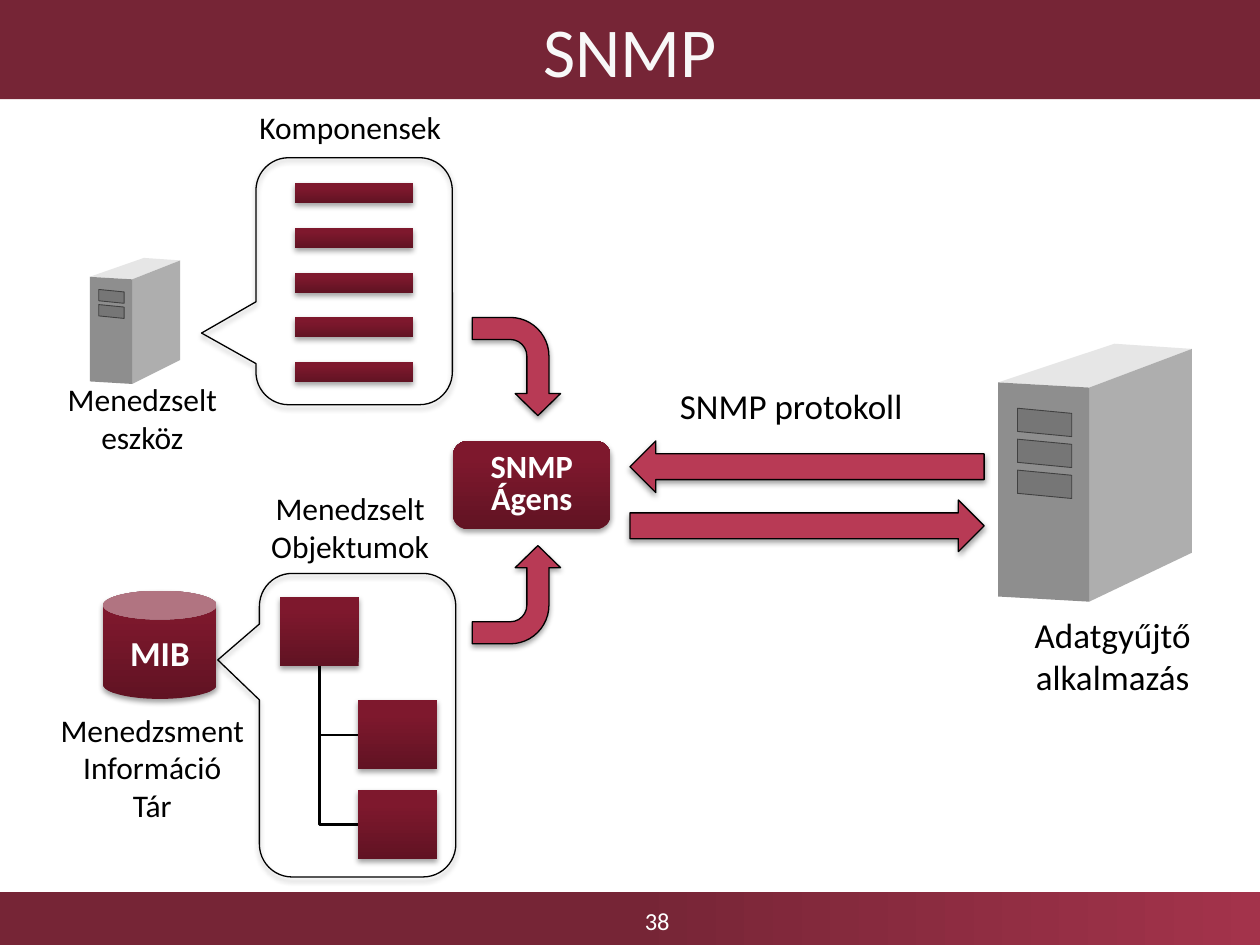
"""Build the SNMP architecture slide."""
from pptx import Presentation
from pptx.dml.color import RGBColor
from pptx.enum import shapes, text
from pptx.oxml import parse_xml
from pptx.oxml.ns import nsdecls, qn
from pptx.util import Cm, Pt

COLORS = {
    "band": "762536", "band_end": "A3334B", "title": "F8F8F8",
    "dark": "611323", "wine": "7E182D", "arrow": "B83A55",
    "black": "000000", "white": "FFFFFF", "front": "8E8E8E",
    "side": "AEAEAE", "top": "E6E6E6", "slot": "767676", "edge": "404040",
}
KIND = shapes.MSO_SHAPE


def rgb(name):
    """Return a named colour."""
    return RGBColor.from_string(COLORS[name])


def paint(shape, fill=None, line=None, width=0.75):
    """Set a solid fill and outline, and drop the theme shadow."""
    if fill:
        shape.fill.solid()
        shape.fill.fore_color.rgb = rgb(fill)
    else:
        shape.fill.background()
    if line:
        shape.line.color.rgb = rgb(line)
        shape.line.width = Pt(width)
    else:
        shape.line.fill.background()
    shape.shadow.inherit = False


def shade(shape, stops, angle):
    """Fill a shape with a two-stop linear gradient."""
    shape.fill.gradient()
    shape.fill.gradient_angle = angle
    for stop, (position, name) in zip(shape.fill.gradient_stops, stops):
        stop.position = position
        stop.color.rgb = rgb(name)


def cast_shadow(shape):
    """Give a shape a soft shadow below it."""
    effects = shape._element.spPr.find(qn("a:effectLst"))
    effects.append(parse_xml(
        f'<a:outerShdw {nsdecls("a")} blurRad="40000" dist="22000" dir="5400000" '
        'rotWithShape="0"><a:srgbClr val="000000"><a:alpha val="36000"/>'
        '</a:srgbClr></a:outerShdw>'))


def write(shape, lines, size, color="black", bold=False, spacing=None):
    """Write centred lines, one paragraph each."""
    frame = shape.text_frame
    for index, line in enumerate(lines):
        para = frame.add_paragraph() if index else frame.paragraphs[0]
        para.alignment = text.PP_ALIGN.CENTER
        if spacing:
            para.line_spacing = spacing
        span = para.add_run()
        span.text = line
        span.font.name = "Calibri"
        span.font.size = Pt(size)
        span.font.bold = bold
        span.font.color.rgb = rgb(color)


def add_shape(page, kind, left, top, width, height):
    """Add a preset shape placed in centimetres."""
    return page.shapes.add_shape(kind, Cm(left), Cm(top), Cm(width), Cm(height))


def add_block(page, kind, left, top, width, height):
    """Add a wine-coloured block with a shadow."""
    block = add_shape(page, kind, left, top, width, height)
    paint(block)
    shade(block, [(0, "dark"), (0.8, "wine")], 90)
    cast_shadow(block)
    block.text_frame.vertical_anchor = text.MSO_ANCHOR.MIDDLE
    return block


def add_callout(page, left, top, width, height, tail):
    """Add an outlined callout with its tail at relative offsets."""
    callout = add_shape(page, KIND.ROUNDED_RECTANGULAR_CALLOUT, left, top, width, height)
    for index, value in enumerate((*tail, 0.167)):
        callout.adjustments[index] = value
    paint(callout, line="black")
    cast_shadow(callout)


def add_arrow(page, kind, left, top, width, height):
    """Add a filled block arrow."""
    arrow = add_shape(page, kind, left, top, width, height)
    paint(arrow, "arrow", "black")
    cast_shadow(arrow)
    return arrow


def add_bent_arrow(page, top, rotation, flipped=False):
    """Add a turned arrow pointing at the agent."""
    arrow = add_arrow(page, KIND.BENT_ARROW, 9.42, top, 1.98, 1.78)
    for index, value in enumerate((0.25, 0.257, 0.25, 0.438)):
        arrow.adjustments[index] = value
    arrow.rotation = rotation
    if flipped:
        arrow._element.spPr.find(qn("a:xfrm")).set("flipV", "1")


def add_branch(page, parent, child):
    """Join the parent's bottom to the child's left side with one bend."""
    x1, y1 = parent.left + parent.width // 2, parent.top + parent.height
    x2, y2 = child.left, child.top + child.height // 2
    branch = page.shapes.add_connector(shapes.MSO_CONNECTOR.ELBOW, x1, y1, x2, y2)
    branch.begin_connect(parent, 2)
    branch.end_connect(child, 1)
    branch.width, branch.height = y2 - y1, x2 - x1
    branch.left = (x1 + x2 - branch.width) // 2
    branch.top = (y1 + y2 - branch.height) // 2
    branch.line.color.rgb = rgb("black")
    branch.line.width = Pt(1.5)
    properties = branch._element.spPr
    properties.find(qn("a:prstGeom")).set("prst", "bentConnector2")
    frame = properties.find(qn("a:xfrm"))
    frame.set("rot", "16200000")
    frame.set("flipH", "1")
    properties.append(parse_xml(f'<a:effectLst {nsdecls("a")}/>'))


def add_label(page, center, top, lines, size=18):
    """Add a caption centred on a position."""
    width, height = 5.4, 0.25 + 0.043 * size * len(lines)
    box = page.shapes.add_textbox(Cm(center - width / 2), Cm(top), Cm(width), Cm(height))
    box.text_frame.word_wrap = True
    write(box, lines, size)


def add_server(page, left, top, width, height, slots):
    """Draw a tower server as a group of faces and drive slots."""
    group = page.shapes.add_group_shape()
    faces = [
        ("top", [(0, 0.15), (0.6, 0), (1, 0.02), (0.47, 0.17)]),
        ("side", [(0.47, 0.17), (1, 0.02), (1, 0.81), (0.47, 1)]),
        ("front", [(0, 0.15), (0.47, 0.17), (0.47, 1), (0, 0.98)]),
    ]
    for index in range(slots):
        y = 0.25 + 0.12 * index
        faces.append(("slot", [(0.1, y), (0.38, y + 0.02), (0.38, y + 0.11), (0.1, y + 0.09)]))
    for name, corners in faces:
        points = [(Cm(left + x * width), Cm(top + y * height)) for x, y in corners]
        builder = group.shapes.build_freeform(*points[0])
        builder.add_line_segments(points[1:], close=True)
        paint(builder.convert_to_shape(), name, "edge" if name == "slot" else None, 0.5)


def add_bands(page):
    """Format the title band and the numbered footer."""
    footer = add_shape(page, KIND.RECTANGLE, 0, 17.98, 25.4, 1.07)
    paint(footer)
    shade(footer, [(0.5, "band"), (1, "band_end")], 0)
    number = page.shapes.add_textbox(Cm(9.12), Cm(18.06), Cm(8.26), Cm(0.99))
    number.text_frame.word_wrap = True
    number.text_frame.vertical_anchor = text.MSO_ANCHOR.MIDDLE
    write(number, ["38"], 14, "white")
    title = page.shapes.title
    title.left, title.top, title.width, title.height = Cm(0), Cm(0), Cm(25.4), Cm(2)
    title.fill.solid()
    title.fill.fore_color.rgb = rgb("band")
    title.text_frame.vertical_anchor = text.MSO_ANCHOR.MIDDLE
    write(title, ["SNMP"], 40, "title")


def main():
    """Build and save the deck."""
    deck = Presentation()
    deck.slide_width, deck.slide_height = Cm(25.4), Cm(19.05)
    page = deck.slides.add_slide(deck.slide_layouts[5])
    add_bands(page)

    add_callout(page, 5.23, 11.56, 3.96, 6.12, (-0.712, -0.215))
    store = add_block(page, KIND.CAN, 2.08, 11.91, 2.29, 2.18)
    store.adjustments[0] = 0.266
    write(store, ["MIB"], 20, "white", True)
    agent = add_block(page, KIND.ROUNDED_RECTANGLE, 9.13, 8.89, 3.18, 1.78)
    write(agent, ["SNMP", "Ágens"], 18.5, "white", True, 0.8)
    root, *children = [add_block(page, KIND.RECTANGLE, left, top, 1.59, 1.39)
                       for left, top in ((5.64, 12.03), (7.22, 14.12), (7.22, 15.93))]
    for child in children:
        add_branch(page, root, child)

    add_callout(page, 5.16, 3.18, 3.96, 4.98, (-0.777, 0.21))
    for index in range(5):
        add_block(page, KIND.RECTANGLE, 5.94, 3.7 + 0.9 * index, 2.39, 0.4)

    add_bent_arrow(page, 11.1, 270, True)
    add_bent_arrow(page, 6.5, 90)
    add_arrow(page, KIND.LEFT_ARROW, 12.7, 8.89, 7.14, 1.04)
    add_arrow(page, KIND.RIGHT_ARROW, 12.7, 10.08, 7.14, 1.04)

    add_label(page, 22.43, 12.24, ["Adatgyűjtő", "alkalmazás"], 20)
    add_label(page, 2.87, 7.54, ["Menedzselt", "eszköz"])
    add_label(page, 7.06, 2.06, ["Komponensek"])
    add_label(page, 3.07, 14.2, ["Menedzsment", "Információ", "Tár"])
    add_label(page, 7.06, 9.73, ["Menedzselt", "Objektumok"])
    add_label(page, 15.95, 7.62, ["SNMP protokoll"], 20)

    add_server(page, 1.81, 5.2, 1.82, 2.54, 2)
    add_server(page, 20.12, 6.93, 3.91, 5.2, 3)
    deck.save("out.pptx")


if __name__ == "__main__":
    main()
